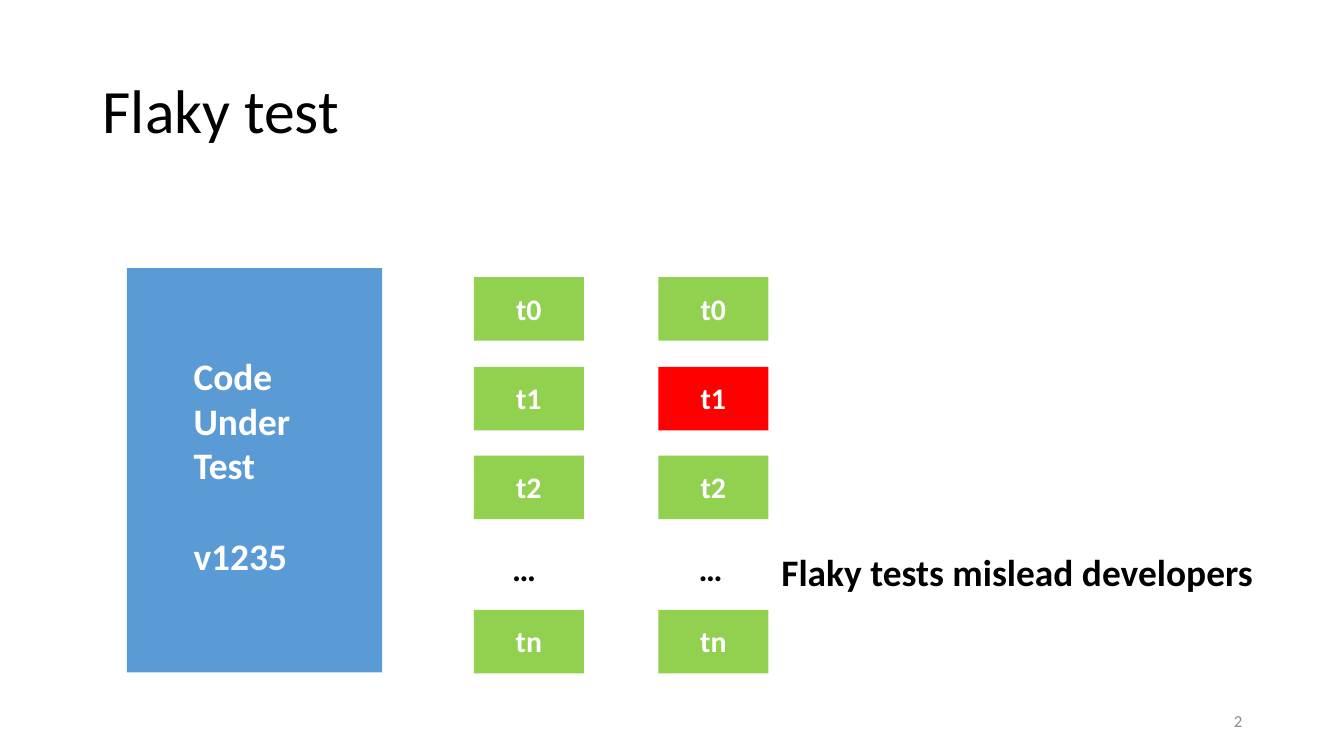
from pptx import Presentation
from pptx.dml.color import RGBColor
from pptx.enum.shapes import MSO_SHAPE
from pptx.enum.text import MSO_ANCHOR, PP_ALIGN
from pptx.util import Inches, Pt

RECT = MSO_SHAPE.RECTANGLE
TOP, MIDDLE = MSO_ANCHOR.TOP, MSO_ANCHOR.MIDDLE
LEFT, CENTER, RIGHT = PP_ALIGN.LEFT, PP_ALIGN.CENTER, PP_ALIGN.RIGHT

COLORS = {
    "code": "5B9BD5",
    "pass": "92D050",
    "fail": "FF0000",
    "dark": "000000",
    "light": "FFFFFF",
    "number": "8C8C8C",
}


class SlideBuilder:
    font = "Calibri"
    inset = 0.13

    def __init__(self, slide):
        self.shapes = slide.shapes

    def color(self, name):
        return RGBColor.from_string(COLORS[name])

    def set_text(self, sp, text, size, color, bold=True, align=LEFT,
                 anchor=TOP, inset=inset, line_spacing=None):
        tf = sp.text_frame
        tf.word_wrap = True
        tf.vertical_anchor = anchor
        tf.margin_left = tf.margin_right = Inches(inset)
        tf.margin_top = tf.margin_bottom = Inches(inset)
        tf.text = text
        for p in tf.paragraphs:
            p.alignment = align
            p.line_spacing = line_spacing
            for r in p.runs:
                r.font.name = self.font
                r.font.size = Pt(size)
                r.font.bold = bold
                r.font.color.rgb = self.color(color)
        return tf

    def box(self, x, y, w, h, fill):
        sp = self.shapes.add_shape(RECT, Inches(x), Inches(y), Inches(w), Inches(h))
        sp.shadow.inherit = False
        sp.fill.solid()
        sp.fill.fore_color.rgb = self.color(fill)
        sp.line.fill.background()
        return sp

    def test(self, x, y, name, state):
        sp = self.box(x, y, 1.09, 0.63, state)
        self.set_text(sp, name, 21.3, "light", align=CENTER)

    def label(self, x, y, w, h, text, size, color="dark", **style):
        sp = self.shapes.add_textbox(Inches(x), Inches(y), Inches(w), Inches(h))
        return self.set_text(sp, text, size, color, **style)


def main():
    prs = Presentation()
    prs.slide_width, prs.slide_height = Inches(13.33), Inches(7.5)
    s = SlideBuilder(prs.slides.add_slide(prs.slide_layouts[6]))

    # Title
    s.label(0.92, 0.4, 11.5, 1.45, "Flaky test", 44, bold=False,
            anchor=MIDDLE, inset=0.1, line_spacing=0.9)

    # Code under test
    s.box(1.26, 2.66, 2.53, 4.01, "code")
    tf = s.label(1.79, 3.37, 1.86, 2.51, "Code Under Test\nv1235", 26.7, "light")
    tf.paragraphs[1].space_before = Pt(32.5)

    # Two runs of the same tests
    test_tops = {"t0": 2.75, "t1": 3.64, "t2": 4.52, "tn": 6.05}
    for x, dots_x, failed in ((4.7, 4.95, None), (6.53, 6.8, "t1")):
        for name, y in test_tops.items():
            s.test(x, y, name, "fail" if name == failed else "pass")
        s.label(dots_x, 5.31, 0.55, 0.67, "…", 24)

    # Conclusion
    s.label(7.62, 5.37, 5.6, 0.86, "Flaky tests mislead developers", 26.7,
            line_spacing=0.9)

    # Slide number
    s.label(9.42, 6.95, 3, 0.4, "2", 12, "number", bold=False,
            align=RIGHT, anchor=MIDDLE, inset=0.1)

    prs.save("out.pptx")


if __name__ == "__main__":
    main()
